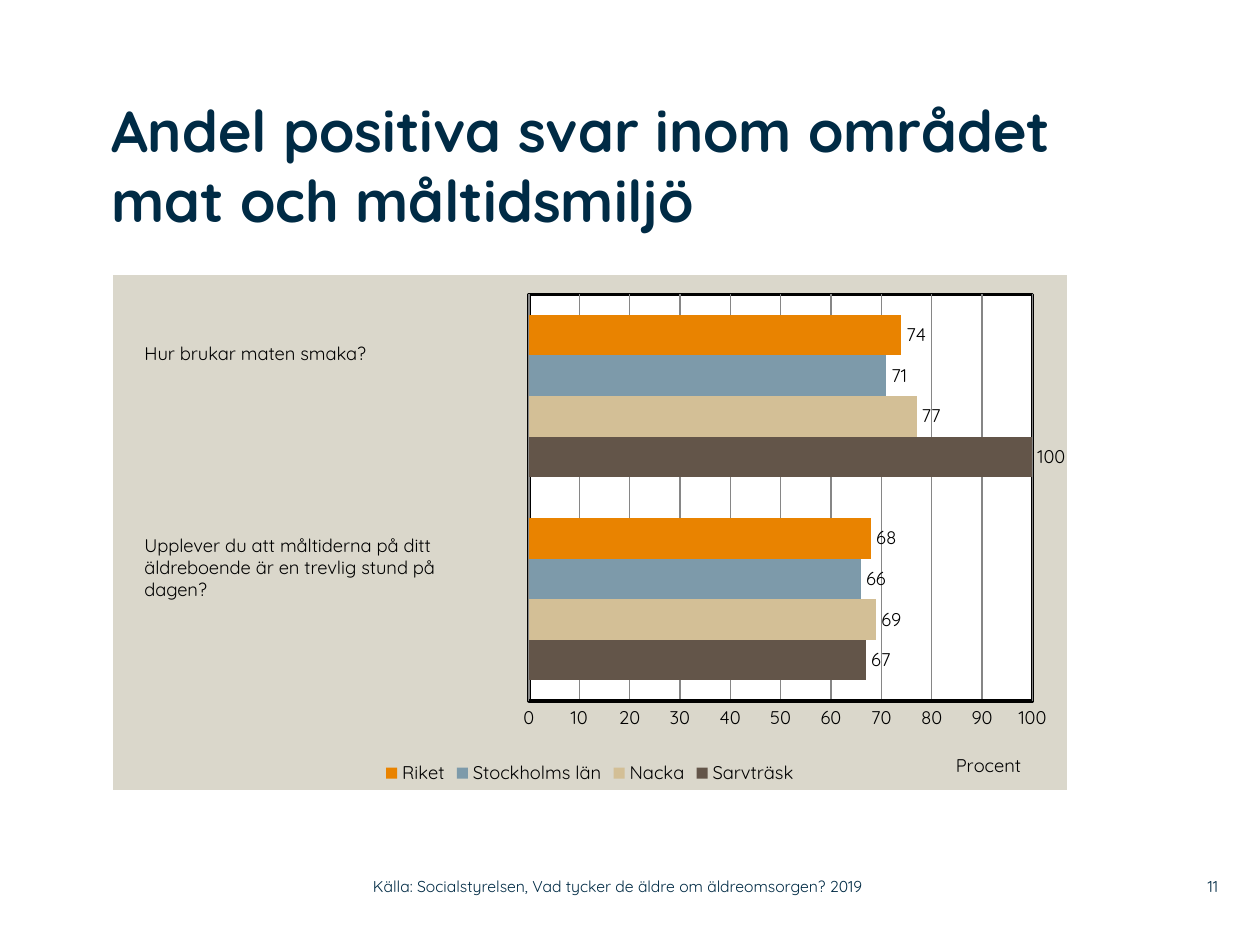
"""Build the slide on positive answers about food and the meal setting."""
from dataclasses import dataclass

from lxml.etree import _Element as Element
from pptx import Presentation
from pptx.chart.data import CategoryChartData
from pptx.dml.color import RGBColor
from pptx.enum.chart import XL_CHART_TYPE as Chart
from pptx.enum.chart import XL_LABEL_POSITION as LabelPos
from pptx.enum.chart import XL_LEGEND_POSITION as LegendPos
from pptx.enum.chart import XL_TICK_MARK as Tick
from pptx.enum.text import MSO_ANCHOR as Anchor
from pptx.enum.text import MSO_AUTO_SIZE as AutoSize
from pptx.enum.text import PP_ALIGN as Align
from pptx.oxml import parse_xml
from pptx.oxml.ns import nsdecls, qn
from pptx.util import Emu, Pt

PX_PER_INCH = 126


@dataclass(frozen=True)
class Theme:
    """Font, colours and type sizes of the slide."""
    font: str = "Quicksand"
    navy: str = "002B45"
    black: str = "000000"
    grid: str = "868686"
    panel: str = "DAD7CB"
    plot: str = "FFFFFF"
    title: float = 33
    body: float = 10.5
    small: float = 9


@dataclass(frozen=True)
class Box:
    """A rectangle in px."""
    x: int
    y: int
    w: int
    h: int

    def emu(self) -> tuple[Emu, ...]:
        return tuple(px(n) for n in (self.x, self.y, self.w, self.h))


@dataclass(frozen=True)
class Label:
    """A text box with its place and look."""
    box: Box
    lines: tuple[str, ...]
    size: float
    color: str
    align: Align = Align.LEFT
    footer: bool = False


@dataclass(frozen=True)
class Series:
    """One group of respondents, with its values from bottom to top."""
    name: str
    values: tuple[int, ...]
    color: str


T = Theme()
SERIES = (
    Series("Sarvträsk", (67, 100), "635549"),
    Series("Nacka", (69, 77), "D3BF96"),
    Series("Stockholms län", (66, 71), "7D9AAA"),
    Series("Riket", (68, 74), "E98300"),
)
LABELS = (
    Label(Box(132, 336, 374, 35), ("Hur brukar maten smaka?",), T.body, T.black),
    Label(Box(132, 528, 369, 79),
          ("Upplever du att måltiderna på ditt äldreboende är en trevlig stund på",
           "dagen?"), T.body, T.black),
    Label(Box(1159, 868, 59, 37), ("11",), T.small, T.navy, Align.RIGHT, True),
    Label(Box(373, 868, 558, 37),
          ("Källa: Socialstyrelsen, Vad tycker de äldre om äldreomsorgen? 2019",),
          T.small, T.navy, footer=True),
)


def px(n: int) -> Emu:
    """Turn px into EMU."""
    return Emu(round(n * 914400 / PX_PER_INCH))


def style_font(font, size: float, color: str, bold: bool = False) -> None:
    """Set the theme font with a size and colour."""
    font.name, font.size, font.bold = T.font, Pt(size), bold
    font.color.rgb = RGBColor.from_string(color)


def clear_margins(tf) -> None:
    """Remove the insets of a text frame."""
    tf.margin_left = tf.margin_right = tf.margin_top = tf.margin_bottom = 0


def add_title(s, text: str, box: Box) -> None:
    """Place and format the title placeholder."""
    sp = s.shapes.title
    sp.left, sp.top, sp.width, sp.height = box.emu()
    tf = sp.text_frame
    tf.text = text
    tf.auto_size, tf.vertical_anchor = AutoSize.NONE, Anchor.TOP
    clear_margins(tf)
    p = tf.paragraphs[0]
    p.alignment = Align.LEFT
    style_font(p.font, T.title, T.navy, bold=True)


def add_label(s, label: Label) -> None:
    """Draw one text box."""
    tf = s.shapes.add_textbox(*label.box.emu()).text_frame
    tf.word_wrap = True
    if label.footer:
        clear_margins(tf)
        tf.vertical_anchor = Anchor.MIDDLE
    tf.text = "\n".join(label.lines)
    for p in tf.paragraphs:
        p.alignment = label.align
        style_font(p.font, label.size, label.color)


def layout(x: float, y: float, size: tuple[float, ...] = ()) -> Element:
    """Make a manual chart layout from fractions of the chart."""
    parts = '<c:layoutTarget val="inner"/>' if size else ""
    parts += '<c:xMode val="edge"/><c:yMode val="edge"/>'
    parts += "".join(f'<c:{tag} val="{v}"/>' for tag, v in zip("xywh", (x, y, *size)))
    return parse_xml(f'<c:layout {nsdecls("c")}><c:manualLayout>{parts}'
                     '</c:manualLayout></c:layout>')


def drop_layout(parent: Element) -> None:
    """Remove an automatic chart layout."""
    for old in parent.findall(qn("c:layout")):
        parent.remove(old)


def area(fill: str, line: str) -> Element:
    """Make the shape properties of a chart area."""
    return parse_xml(f'<c:spPr {nsdecls("c", "a")}><a:solidFill><a:srgbClr val="{fill}"/>'
                     f'</a:solidFill>{line}</c:spPr>')


def add_bar_chart(s, box: Box) -> None:
    """Draw the bar chart of answers by respondent group."""
    data = CategoryChartData()
    data.categories = ("1", "2")
    for group in SERIES:
        data.add_series(group.name, group.values)
    chart = s.shapes.add_chart(Chart.BAR_CLUSTERED, *box.emu(), data).chart
    style_font(chart.font, T.body, T.black)
    chart.has_title = False
    chart.has_legend = True
    chart.legend.position, chart.legend.include_in_layout = LegendPos.BOTTOM, False
    style_font(chart.legend.font, T.body, T.black)

    chart.category_axis.visible = False
    axis = chart.value_axis
    axis.minimum_scale, axis.maximum_scale, axis.major_unit = 0, 100, 10
    axis.major_tick_mark = axis.minor_tick_mark = Tick.NONE
    axis.format.line.color.rgb = RGBColor.from_string(T.black)
    axis.format.line.width = Pt(2)
    axis.major_gridlines.format.line.color.rgb = RGBColor.from_string(T.grid)
    axis.major_gridlines.format.line.width = Pt(0.75)
    style_font(axis.tick_labels.font, T.body, T.black)
    tf = axis.axis_title.text_frame
    tf.text = "Procent"
    style_font(tf.paragraphs[0].font, T.body, T.black)

    plot = chart.plots[0]
    plot.gap_width, plot.overlap, plot.vary_by_categories = 100, 0, False
    for group, series in zip(SERIES, plot.series):
        series.format.fill.solid()
        series.format.fill.fore_color.rgb = RGBColor.from_string(group.color)
        series.invert_if_negative = False
        labels = series.data_labels
        labels.show_value, labels.position = True, LabelPos.OUTSIDE_END
        style_font(labels.font, T.body, T.black)

    root = chart.element
    plot_area, title = root.find(".//" + qn("c:plotArea")), root.find(".//" + qn("c:title"))
    drop_layout(plot_area)
    plot_area.insert(0, layout(0.436, 0.038, (0.528, 0.789)))
    border = f'<a:ln w="{Pt(2)}"><a:solidFill><a:srgbClr val="{T.black}"/></a:solidFill></a:ln>'
    plot_area.append(area(T.plot, border))
    drop_layout(title)
    title.find(qn("c:tx")).addnext(layout(0.88, 0.92))
    root.find(qn("c:chart")).addnext(area(T.panel, "<a:ln><a:noFill/></a:ln>"))


def main() -> None:
    """Build and save the slide."""
    prs = Presentation()
    prs.slide_width, prs.slide_height = px(1260), px(945)
    s = prs.slides.add_slide(prs.slide_layouts[5])
    add_title(s, "Andel positiva svar inom området mat och måltidsmiljö",
              Box(111, 95, 1061, 179))
    add_bar_chart(s, Box(113, 275, 954, 515))
    for label in LABELS:
        add_label(s, label)
    prs.save("out.pptx")


if __name__ == "__main__":
    main()
